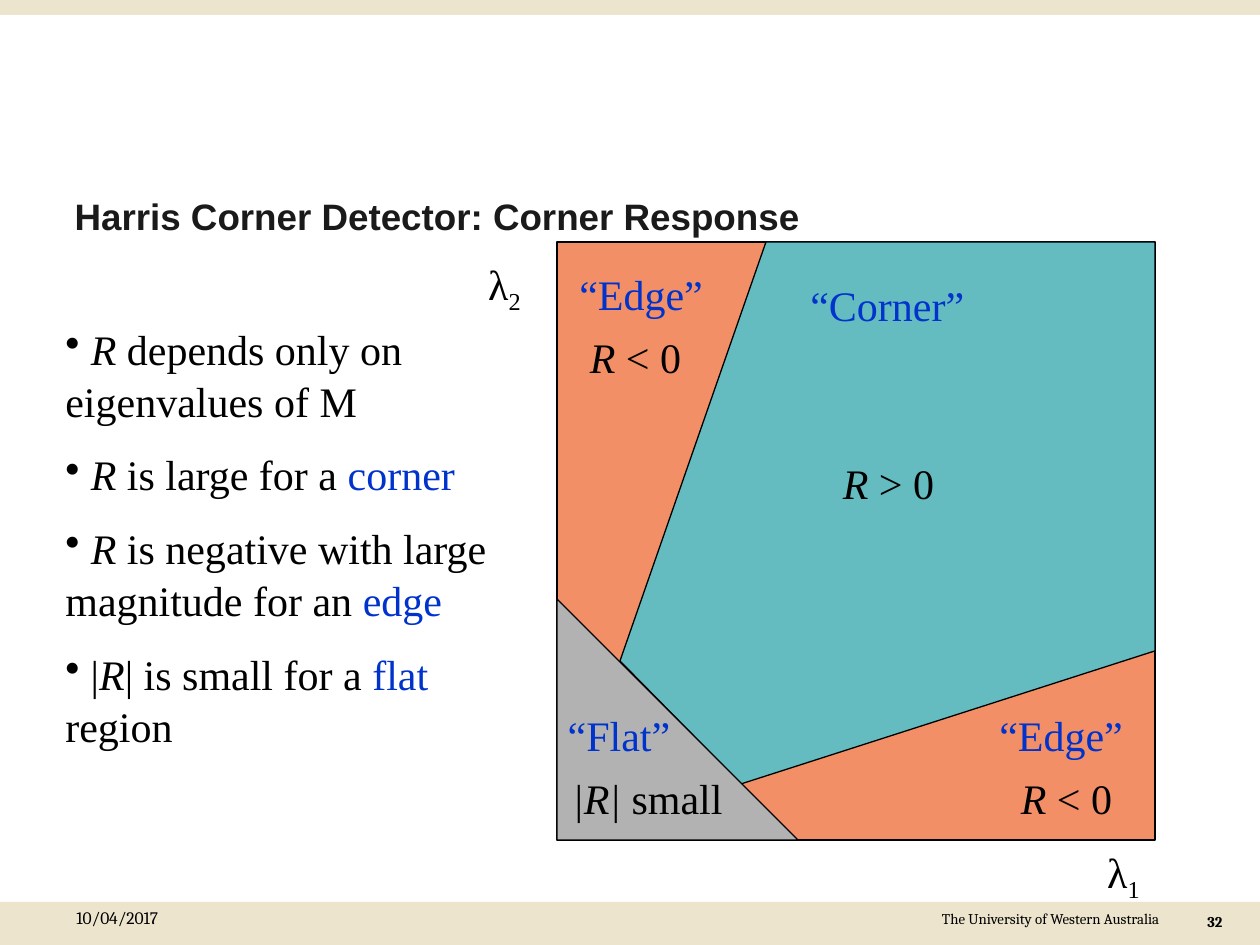
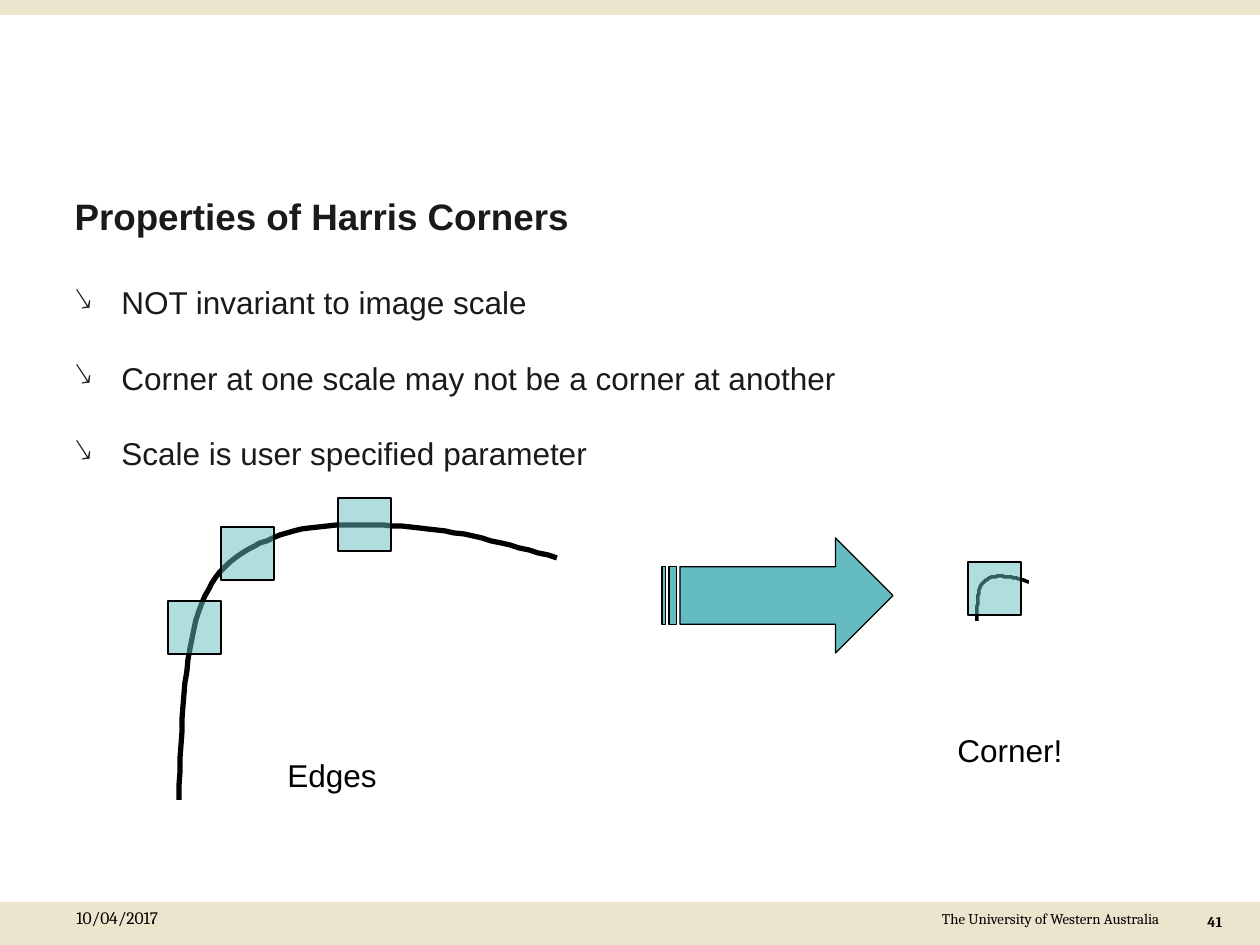
from dataclasses import dataclass

import pptx
import pptx.dml.color
import pptx.enum.shapes
import pptx.enum.text
import pptx.oxml.ns
import pptx.util
from lxml import etree

EMU_PER_PX = 914400 / 126
SLIDE_WIDTH, SLIDE_HEIGHT = 1260, 945
CURVE_STEPS = 16

MSO_SHAPE = pptx.enum.shapes.MSO_SHAPE
ALIGN = pptx.enum.text.PP_ALIGN
ANCHOR = pptx.enum.text.MSO_ANCHOR


@dataclass(frozen=True)
class Theme:
    black: str = "000000"
    ink: str = "1A1A1A"
    highlight: str = "0033CC"
    band: str = "ECE4CD"
    edge: str = "F38F67"
    corner: str = "64BCC1"
    flat: str = "B2B2B2"
    sans: str = "Arial"
    serif: str = "Times New Roman"
    footer_font: str = "Cambria"
    title_size: float = 21
    math_size: float = 24
    body_size: float = 18
    date_size: float = 10
    footer_size: float = 8.5
    outline: float = 0.75


THEME = Theme()


@dataclass(frozen=True)
class Style:
    font: str
    size: float
    color: str = THEME.black
    bold: bool = False


TITLE = Style(THEME.sans, THEME.title_size, THEME.ink, True)
BODY = Style(THEME.sans, THEME.body_size, THEME.ink)
CAPTION = Style(THEME.sans, THEME.body_size)
MATH = Style(THEME.serif, THEME.math_size)
REGION = Style(THEME.serif, THEME.math_size, THEME.highlight)
DATE = Style(THEME.footer_font, THEME.date_size)
FOOTER = Style(THEME.footer_font, THEME.footer_size)
PAGE_NUMBER = Style(THEME.footer_font, THEME.footer_size, bold=True)


@dataclass(frozen=True)
class Run:
    text: str
    style: Style = MATH
    italic: bool = False
    subscript: bool = False


R = Run("R", italic=True)


def px(length):
    return pptx.util.Emu(round(length * EMU_PER_PX))


def rgb(color):
    return pptx.dml.color.RGBColor.from_string(color)


def add_runs(paragraph, runs):
    for item in runs:
        run = paragraph.add_run()
        run.text = item.text
        font = run.font
        font.name = item.style.font
        font.size = pptx.util.Pt(item.style.size)
        font.bold = item.style.bold
        font.italic = item.italic
        font.color.rgb = rgb(item.style.color)
        if item.subscript:
            run._r.get_or_add_rPr().set("baseline", "-25000")


def add_text(slide, box, *runs, align=ALIGN.LEFT, anchor=ANCHOR.TOP, wrap=True):
    text_box = slide.shapes.add_textbox(*map(px, box))
    frame = text_box.text_frame
    frame.word_wrap = wrap
    frame.vertical_anchor = anchor
    frame.paragraphs[0].alignment = align
    add_runs(frame.paragraphs[0], runs)
    return text_box


def add_bullets(slide, box, items, bullet, space_before, line_spacing=1.0, indent=0):
    """Add bulleted paragraphs; indent is the hanging indent in px."""
    frame = slide.shapes.add_textbox(*map(px, box)).text_frame
    frame.word_wrap = True
    for index, runs in enumerate(items):
        paragraph = frame.add_paragraph() if index else frame.paragraphs[0]
        properties = paragraph._p.get_or_add_pPr()
        properties.set("marL", str(px(indent)))
        properties.set("indent", str(-px(indent)))
        mark = etree.SubElement(properties, pptx.oxml.ns.qn("a:buChar"))
        mark.set("char", bullet)
        paragraph.line_spacing = line_spacing
        if index:
            paragraph.space_before = pptx.util.Pt(space_before)
        add_runs(paragraph, runs)


def paint(shape, fill=None, line=None, width=THEME.outline, opacity=100):
    shape.shadow.inherit = False
    if fill:
        shape.fill.solid()
        shape.fill.fore_color.rgb = rgb(fill)
        if opacity < 100:
            color = shape.fill._xPr.find(".//" + pptx.oxml.ns.qn("a:srgbClr"))
            alpha = etree.SubElement(color, pptx.oxml.ns.qn("a:alpha"))
            alpha.set("val", str(opacity * 1000))
    else:
        shape.fill.background()
    if line:
        shape.line.color.rgb = rgb(line)
        shape.line.width = pptx.util.Pt(width)
    else:
        shape.line.fill.background()


def add_preset(slide, kind, box, fill, line=THEME.black, opacity=100):
    shape = slide.shapes.add_shape(kind, *map(px, box))
    paint(shape, fill, line, opacity=opacity)
    return shape


def add_outline(slide, points, close, **look):
    builder = slide.shapes.build_freeform(*points[0], scale=EMU_PER_PX)
    builder.add_line_segments(points[1:], close=close)
    paint(builder.convert_to_shape(), **look)


def curve_points(points):
    """Sample chained cubic Béziers: a start, then three points for each piece."""
    samples = [points[0]]
    for first in range(0, len(points) - 1, 3):
        piece = points[first:first + 4]
        for step in range(1, CURVE_STEPS + 1):
            t = step / CURVE_STEPS
            weights = ((1 - t) ** 3, 3 * t * (1 - t) ** 2, 3 * t ** 2 * (1 - t), t ** 3)
            samples.append(tuple(
                sum(weight * point[axis] for weight, point in zip(weights, piece))
                for axis in (0, 1)))
    return samples


def add_curve(slide, points, width):
    add_outline(slide, curve_points(points), False, line=THEME.black, width=width)


def add_window(slide, left, top):
    """Add one translucent detector window."""
    add_preset(slide, MSO_SHAPE.RECTANGLE, (left, top, 53, 53), THEME.corner, opacity=50)


def add_titled_slide(presentation, title_text, number):
    """Add a slide with its title, bands, date, footer and page number."""
    slide = presentation.slides.add_slide(presentation.slide_layouts[5])
    footer = add_preset(slide, MSO_SHAPE.RECTANGLE, (0, 902, 1262, 44), THEME.band, None)
    frame = footer.text_frame
    frame.margin_left, frame.margin_top = px(942), px(8)
    frame.vertical_anchor = ANCHOR.TOP
    frame.paragraphs[0].alignment = ALIGN.LEFT
    add_runs(frame.paragraphs[0], [Run("The University of Western Australia", FOOTER)])
    add_preset(slide, MSO_SHAPE.RECTANGLE, (0, 0, 1262, 15), THEME.band, None)

    title = slide.shapes.title
    title.left, title.top, title.width, title.height = map(px, (62, 186, 1134, 59))
    title.text_frame.auto_size = pptx.enum.text.MSO_AUTO_SIZE.NONE
    title.text_frame.vertical_anchor = ANCHOR.MIDDLE
    title.text_frame.paragraphs[0].alignment = ALIGN.LEFT
    add_runs(title.text_frame.paragraphs[0], [Run(title_text, TITLE)])

    add_text(slide, (64, 893, 118, 50), Run("10/04/2017", DATE), anchor=ANCHOR.MIDDLE)
    add_text(slide, (1195, 900, 50, 43), Run(str(number), PAGE_NUMBER),
             anchor=ANCHOR.MIDDLE)
    return slide


def add_response_plane(slide):
    """Draw the eigenvalue plane with its edge, corner and flat regions."""
    left, top, side = 557, 242, 598
    right, bottom = left + side, top + side
    add_preset(slide, MSO_SHAPE.RECTANGLE, (left, top, side, side), THEME.edge)
    corner = [(620, 661), (766, top), (right, top), (right, 651), (741, 784)]
    add_outline(slide, corner, True, fill=THEME.corner, line=THEME.black)
    add_preset(slide, MSO_SHAPE.RIGHT_TRIANGLE, (left, bottom - 241, 241, 241), THEME.flat)

    for box, index in (((1071, 840, 105, 63), "1"), ((431, 252, 147, 63), "2")):
        add_text(slide, box, Run("λ"), Run(index, subscript=True), align=ALIGN.CENTER)

    for box, name, align in (
            ((798, 273, 368, 63), "“Corner”", ALIGN.LEFT),
            ((987, 703, 179, 63), "“Edge”", ALIGN.LEFT),
            ((567, 262, 179, 63), "“Edge”", ALIGN.LEFT),
            ((535, 703, 168, 63), "“Flat”", ALIGN.CENTER)):
        add_text(slide, box, Run(name, REGION), align=align)

    for box, runs in (
            ((830, 451, 117, 63), (R, Run(" > 0"))),
            ((577, 325, 117, 63), (R, Run(" < 0"))),
            ((1008, 766, 117, 63), (R, Run(" < 0"))),
            ((560, 766, 175, 63), (Run("|R|", italic=True), Run(" small")))):
        add_text(slide, box, *runs, align=ALIGN.CENTER, wrap=False)


def build_corner_response(presentation):
    slide = add_titled_slide(presentation, "Harris Corner Detector: Corner Response", 32)
    add_response_plane(slide)
    space = Run(" ")
    add_bullets(slide, (53, 315, 483, 440), [
        (space, R, Run(" depends only on eigenvalues of M")),
        (space, R, Run(" is large for a "), Run("corner", REGION)),
        (space, R, Run(" is negative with large magnitude for an "), Run("edge", REGION)),
        (Run(" |"), R, Run("| is small for a "), Run("flat", REGION), Run(" region")),
    ], "•", space_before=12, line_spacing=1.04)


def build_corner_properties(presentation):
    slide = add_titled_slide(presentation, "Properties of Harris Corners", 41)
    statements = ("NOT invariant to image scale",
                  "Corner at one scale may not be a corner at another",
                  "Scale is user specified parameter")
    add_bullets(slide, (62, 277, 1134, 200),
                [(Run(statement, BODY),) for statement in statements],
                "↘", space_before=21.5, indent=47)

    add_curve(slide, [(977, 621), (977, 610), (978, 597), (979, 591),
                      (981, 583), (985, 581), (989, 578),
                      (994, 576), (1002, 576), (1008, 577),
                      (1015, 577), (1022, 580), (1029, 582)], width=2)
    add_window(slide, 968, 562)

    add_curve(slide, [(179, 800), (181, 727), (184, 655), (199, 611),
                      (215, 567), (238, 552), (273, 538),
                      (307, 523), (363, 523), (410, 527),
                      (456, 530), (507, 544), (557, 558)], width=3)
    for left, top in ((168, 601), (221, 527), (338, 498)):
        add_window(slide, left, top)

    add_preset(slide, MSO_SHAPE.STRIPED_RIGHT_ARROW, (662, 538, 231, 115), THEME.corner)
    add_text(slide, (275, 750, 116, 50), Run("Edges", CAPTION), wrap=False)
    add_text(slide, (945, 725, 131, 50), Run("Corner!", CAPTION), wrap=False)


def main():
    presentation = pptx.Presentation()
    presentation.slide_width = px(SLIDE_WIDTH)
    presentation.slide_height = px(SLIDE_HEIGHT)
    build_corner_response(presentation)
    build_corner_properties(presentation)
    presentation.save("out.pptx")


if __name__ == "__main__":
    main()
